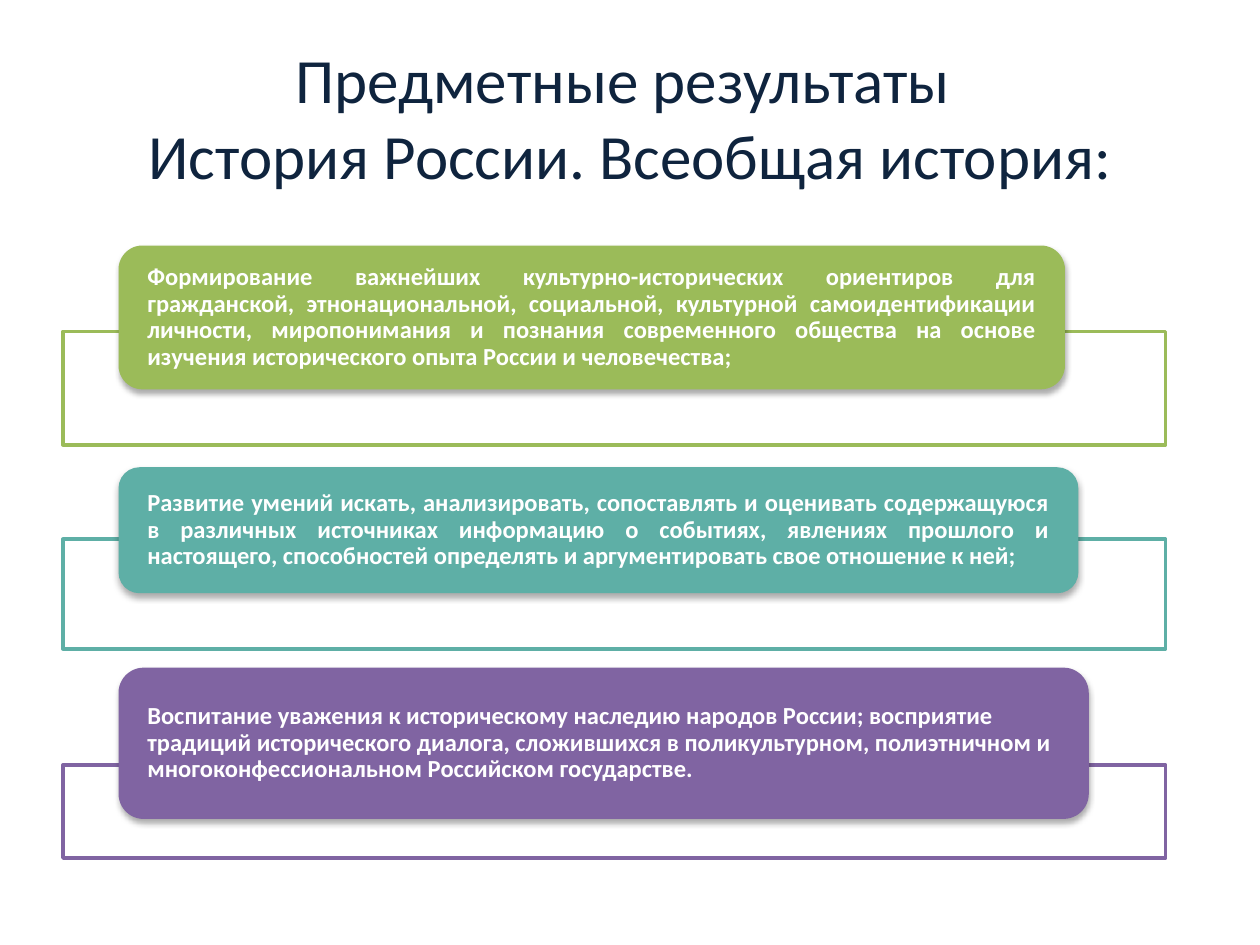
from lxml import etree
from pptx import Presentation
from pptx.dml.color import RGBColor
from pptx.enum import shapes, text
from pptx.oxml import ns
from pptx.util import Cm, Pt

NAVY = RGBColor(0x0F, 0x24, 0x3E)
WHITE = RGBColor(0xFF, 0xFF, 0xFF)
GREEN = RGBColor(0x9B, 0xBB, 0x59)
TEAL = RGBColor(0x5E, 0xAF, 0xA6)
PURPLE = RGBColor(0x80, 0x64, 0xA2)
FONT = "Calibri"
CORNER = 0.1667
CORNER_INSET = CORNER * 0.29

HEADING = "Предметные результаты \vИстория России. Всеобщая история:"
RESULTS = [
    ("Формирование важнейших культурно-исторических ориентиров для гражданской, "
     "этнонациональной, социальной, культурной самоидентификации личности, "
     "миропонимания и познания современного общества на основе изучения "
     "исторического опыта России и человечества;",
     GREEN, text.PP_ALIGN.JUSTIFY, (6.68, 2.29), (4.95, 19.08, 2.9)),
    ("Развитие умений искать, анализировать, сопоставлять и оценивать содержащуюся "
     "в различных источниках информацию о событиях, явлениях прошлого и настоящего, "
     "способностей определять и аргументировать свое отношение к ней;",
     TEAL, text.PP_ALIGN.JUSTIFY, (10.87, 2.21), (9.42, 19.35, 2.54)),
    ("Воспитание уважения к историческому наследию народов России; восприятие "
     "традиций исторического диалога, сложившихся в поликультурном, полиэтничном "
     "и многоконфессиональном Российском государстве.",
     PURPLE, text.PP_ALIGN.LEFT, (15.42, 1.88), (13.46, 19.56, 3.05)),
]


def add_child(parent, tag, **attributes):
    return etree.SubElement(parent, ns.qn(tag), **attributes)


def format_title(title):
    title.left, title.top = Cm(1.27), Cm(0.76)
    title.width, title.height = Cm(22.86), Cm(3.18)
    frame = title.text_frame
    frame.text = HEADING
    frame.vertical_anchor = text.MSO_ANCHOR.MIDDLE
    heading = frame.paragraphs[0]
    heading.alignment = text.PP_ALIGN.CENTER
    heading.font.name = FONT
    heading.font.size = Pt(36)
    heading.font.color.rgb = NAVY


def add_frame(slide, color, top, height):
    frame = slide.shapes.add_shape(
        shapes.MSO_SHAPE.RECTANGLE, Cm(1.27), Cm(top), Cm(22.23), Cm(height))
    frame.shadow.inherit = False
    frame.fill.solid()
    frame.fill.fore_color.rgb = WHITE
    fill_color = frame.fill._xPr.find(".//" + ns.qn("a:srgbClr"))
    add_child(fill_color, "a:alpha", val="90000")
    frame.line.color.rgb = color
    frame.line.width = Pt(2)


def add_drop_shadow(shape):
    shape.shadow.inherit = False
    effects = shape._element.spPr.find(ns.qn("a:effectLst"))
    shadow = add_child(effects, "a:outerShdw", blurRad=str(Pt(3.5)),
                       dist=str(Pt(2.2)), dir="5400000", rotWithShape="0")
    color = add_child(shadow, "a:srgbClr", val="000000")
    add_child(color, "a:alpha", val="32000")


def add_card(slide, wording, color, alignment, top, width, height):
    card = slide.shapes.add_shape(
        shapes.MSO_SHAPE.ROUNDED_RECTANGLE, Cm(2.39), Cm(top), Cm(width), Cm(height))
    card.adjustments[0] = CORNER
    card.fill.solid()
    card.fill.fore_color.rgb = color
    card.line.fill.background()
    add_drop_shadow(card)

    body = card.text_frame
    body.word_wrap = True
    body.vertical_anchor = text.MSO_ANCHOR.MIDDLE
    body.margin_left = body.margin_right = Cm(0.58 - CORNER_INSET * height)
    body.margin_top = body.margin_bottom = 0
    body.text = wording
    result = body.paragraphs[0]
    result.alignment = alignment
    result.line_spacing = 0.9
    result.font.name = FONT
    result.font.size = Pt(14)
    result.font.bold = True
    result.font.color.rgb = WHITE


def main():
    deck = Presentation()
    deck.slide_width, deck.slide_height = Cm(25.4), Cm(19.05)
    slide = deck.slides.add_slide(deck.slide_layouts[5])
    format_title(slide.shapes.title)
    for wording, color, alignment, frame_place, card_place in RESULTS:
        add_frame(slide, color, *frame_place)
        add_card(slide, wording, color, alignment, *card_place)
    deck.save("out.pptx")


if __name__ == "__main__":
    main()
